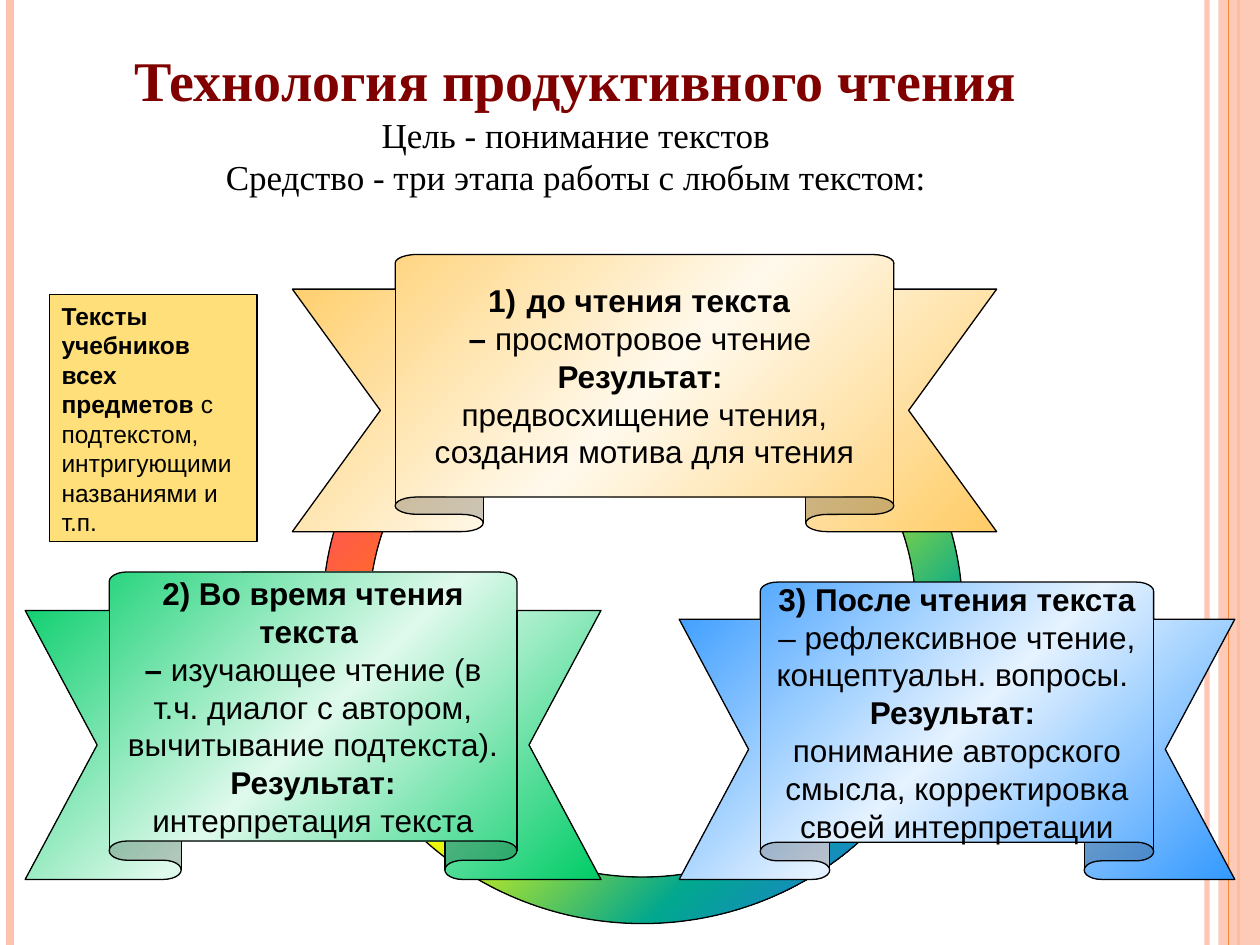
from collections import namedtuple

import pptx
import pptx.dml.color
import pptx.enum.shapes
import pptx.enum.text
import pptx.util
from lxml import etree
from pptx.oxml.ns import qn

SHAPE = pptx.enum.shapes.MSO_SHAPE
ALIGN = pptx.enum.text.PP_ALIGN
ANCHOR = pptx.enum.text.MSO_ANCHOR
COLUMNS, ROWS = 100, 75

deck = pptx.Presentation()
deck.slide_width = pptx.util.Inches(10)
deck.slide_height = pptx.util.Inches(7.5)
COL = deck.slide_width // COLUMNS
ROW = deck.slide_height // ROWS


class Box(namedtuple("Box", "left top width height")):
    """An area measured in columns and rows of the slide grid."""

    def inner(self, left, top, width, height):
        return Box(self.left + left, self.top + top, width, height)

    def emu(self):
        return (round(self.left * COL), round(self.top * ROW),
                round(self.width * COL), round(self.height * ROW))


def color(hex_code):
    return pptx.dml.color.RGBColor.from_string(hex_code)


def set_alpha(fill_parent, percent):
    for code in fill_parent.iter(qn("a:srgbClr")):
        etree.SubElement(code, qn("a:alpha")).set("val", str(percent * 1000))


def add_text(paragraph, text, size=18, font="Arial", code="000000", bold=False):
    """Add a run; a line feed in the text becomes a line break."""
    for index, line in enumerate(text.split("\n")):
        if index:
            paragraph.add_line_break()
        run = paragraph.add_run()
        run.text = line
        run.font.size = pptx.util.Pt(size)
        run.font.name = font
        run.font.bold = bold
        run.font.color.rgb = color(code)


def fill_gradient(shape, codes):
    """Spread the colours evenly along a 45 degree diagonal."""
    shape.fill.gradient()
    shape.fill.gradient_angle = 315
    stops = shape._element.spPr.find(qn("a:gradFill")).find(qn("a:gsLst"))
    for stop in list(stops):
        stops.remove(stop)
    for index, code in enumerate(codes):
        stop = etree.SubElement(stops, qn("a:gs"))
        stop.set("pos", str(100000 * index // (len(codes) - 1)))
        etree.SubElement(stop, qn("a:srgbClr")).set("val", code)


def add_shape(slide, kind, box, fill, outlined=True):
    """Fill with one colour, or with a gradient when a list is given."""
    shape = slide.shapes.add_shape(kind, *box.emu())
    shape.shadow.inherit = False
    if isinstance(fill, str):
        shape.fill.solid()
        shape.fill.fore_color.rgb = color(fill)
    else:
        fill_gradient(shape, fill)
    if outlined:
        shape.line.color.rgb = color("000000")
        shape.line.width = pptx.util.Pt(0.75)
    else:
        shape.line.fill.background()
    return shape


def write(shape, paragraphs, align=ALIGN.CENTER, anchor=ANCHOR.MIDDLE):
    """Each paragraph is a list of (text, format) pairs."""
    frame = shape.text_frame
    frame.word_wrap = True
    frame.vertical_anchor = anchor
    for index, runs in enumerate(paragraphs):
        paragraph = frame.add_paragraph() if index else frame.paragraphs[0]
        paragraph.alignment = align
        for text, style in runs:
            add_text(paragraph, text, **style)
    return frame


def vertical_rule(slide, box, column, code, width, alpha=None):
    x, top, _, height = box.inner(column, 0, 0, box.height).emu()
    rule = slide.shapes.add_connector(
        pptx.enum.shapes.MSO_CONNECTOR.STRAIGHT, x, top, x, top + height)
    rule.line.color.rgb = color(code)
    rule.line.width = pptx.util.Pt(width)
    properties = rule._element.spPr
    if alpha:
        set_alpha(properties, alpha)
    etree.SubElement(properties, qn("a:effectLst"))


def side_bands(slide, box):
    vertical_rule(slide, box, 95.8, "FEC3AE", 3, alpha=93)
    vertical_rule(slide, box, 0.8, "FEC3AE", 4.5)
    vertical_rule(slide, box, 98.3, "FE8637", 1.5)
    band = add_shape(slide, SHAPE.RECTANGLE,
                     box.inner(96.7, 0, 3.3, box.height), "FEC3AE", outlined=False)
    set_alpha(band._element.spPr, 87)
    vertical_rule(slide, box, 97.5, "FE8637", 0.75)


def stage_ribbon(slide, box, edge, middle, paragraphs):
    ribbon = add_shape(slide, SHAPE.UP_RIBBON, box, [edge, middle, edge])
    ribbon.adjustments[0] = 0.125
    ribbon.adjustments[1] = 0.708
    return write(ribbon, paragraphs)


def reading_cycle(slide, box):
    """A rainbow ring with a ribbon for each stage of reading."""
    bold, plain = {"bold": True}, {}
    ring = add_shape(slide, SHAPE.DONUT, box.inner(23.6, 3.9, 50.8, 49.2),
                     ["FF3399", "FF6633", "FFFF00", "01A78F", "3366FF"])
    ring.adjustments[0] = 0.075

    stage_ribbon(slide, box.inner(51.9, 26, 44.1, 23.6), "3399FF", "E5F2FF", [
        [("3) После чтения текста ", bold),
         ("– рефлексивное чтение, концептуальн. вопросы. ", plain)],
        [("Результат: ", bold)],
        [("понимание авторского смысла, корректировка своей интерпретации", plain)],
    ])
    stage_ribbon(slide, box.inner(0, 25.2, 45.7, 24.4), "00CC66", "DFF9EC", [
        [("2) Во время чтения текста ", bold)],
        [("– ", bold),
         ("изучающее чтение (в т.ч. диалог с автором, вычитывание подтекста).", plain),
         (" Результат: ", bold), ("интерпретация текста", plain)],
    ])
    before = stage_ribbon(slide, box.inner(21.2, 0, 55.9, 22), "FFCC66", "FFF9EC", [
        [(" до чтения текста ", bold)],
        [("– ", bold), ("просмотровое чтение ", plain)],
        [("Результат: ", bold)],
        [("предвосхищение чтения, создания мотива для чтения", plain)],
    ])
    numbered = before.paragraphs[0]._p.get_or_add_pPr()
    etree.SubElement(numbered, qn("a:buAutoNum")).set("type", "arabicParenR")


def heading(slide, box):
    panel = add_shape(slide, SHAPE.RECTANGLE, box, "FFFFFF", outlined=False)
    serif = "Times New Roman"
    write(panel, [
        [("Технология продуктивного чтения",
          {"size": 32, "font": serif, "code": "800000", "bold": True})],
        [("Цель - понимание текстов\nСредство - три этапа работы с любым текстом:",
          {"size": 20, "font": serif})],
    ])


def textbook_note(slide, box):
    note = add_shape(slide, SHAPE.RECTANGLE, box, "FFDF79")
    write(note, [[
        ("Тексты учебников всех предметов", {"size": 14, "bold": True}),
        (" с подтекстом, интригующими названиями и т.п.", {"size": 14}),
    ]], align=ALIGN.LEFT, anchor=ANCHOR.TOP)


def main():
    slide = deck.slides.add_slide(deck.slide_layouts[6])
    side_bands(slide, Box(0, 0, COLUMNS, ROWS))
    reading_cycle(slide, Box(2, 20.2, 96, 53.1))
    heading(slide, Box(3.1, 2.3, 85.2, 14.7))
    textbook_note(slide, Box(3.9, 23.4, 16.5, 19.6))
    deck.save("out.pptx")


if __name__ == "__main__":
    main()
